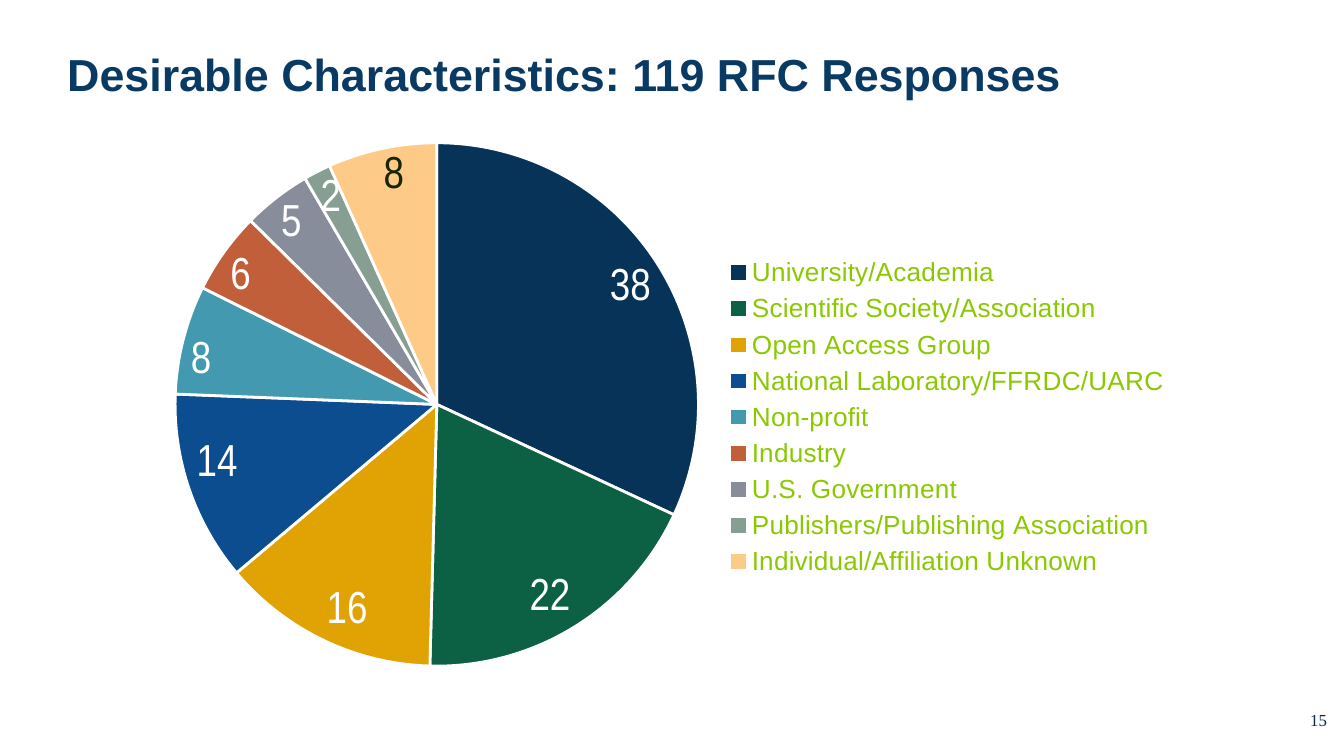
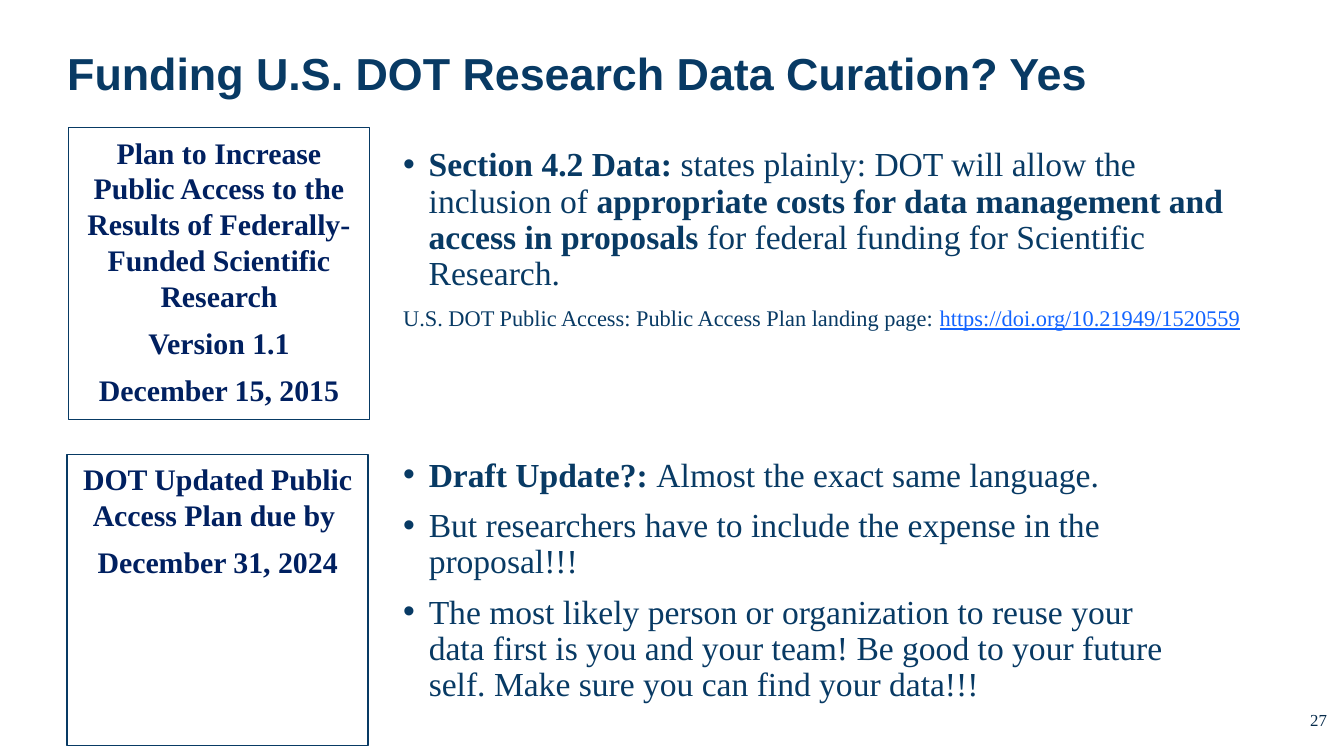
"""Build two slides on public access responses and research data funding."""
from lxml import etree
from pptx import Presentation
from pptx.chart.data import CategoryChartData
from pptx.dml.color import RGBColor
from pptx.enum.chart import XL_CHART_TYPE as ChartType
from pptx.enum.chart import XL_LABEL_POSITION as LabelPosition
from pptx.enum.chart import XL_LEGEND_POSITION as LegendPosition
from pptx.enum.shapes import MSO_SHAPE as Shape
from pptx.enum.text import MSO_ANCHOR as Anchor
from pptx.enum.text import MSO_AUTO_SIZE as AutoSize
from pptx.enum.text import PP_ALIGN as Align
from pptx.oxml.ns import qn
from pptx.util import Inches, Pt

NAVY, FOOTER, PLAN, LINK, WHITE = "083A64", "062B4B", "002060", "1264FF", "FFFFFF"
SERIF = "Times New Roman"


def set_font(font, size, name, color, bold=False, underline=None):
    """Format one font object."""
    font.size, font.name, font.bold = Pt(size), name, bold
    font.color.rgb = RGBColor.from_string(color)
    if underline:
        font.underline = True


def add_text(frame, text, size=18, name=SERIF, color=NAVY, bold=False, bullet=False,
             align=Align.LEFT, spacing=None, before=0, after=0):
    """Add a paragraph; text is a string or a list of (text, font changes) pairs."""
    first = len(frame.paragraphs) == 1 and not frame.paragraphs[0].runs
    para = frame.paragraphs[0] if first else frame.add_paragraph()
    if bullet:
        props = para._p.get_or_add_pPr()
        props.set("marL", str(Inches(0.19)))
        props.set("indent", str(-Inches(0.19)))
        etree.SubElement(props, qn("a:buFont")).set("typeface", "Arial")
        etree.SubElement(props, qn("a:buChar")).set("char", "•")
    para.alignment = align
    para.line_spacing = spacing
    para.space_before = Pt(0 if first else before)
    para.space_after = Pt(after)
    for words, changes in [(text, {})] if isinstance(text, str) else text:
        span = para.add_run()
        span.text = words
        set_font(span.font, **{"size": size, "name": name, "color": color, "bold": bold, **changes})


deck = Presentation()
deck.slide_width = Inches(10)
deck.slide_height = Inches(10 * 9 / 16)

pages = []
for heading, number, top, height, anchor in [
    ("Desirable Characteristics: 119 RFC Responses", "15", 0, 0.75, Anchor.BOTTOM),
    ("Funding U.S. DOT Research Data Curation? Yes", "27", 0.39, 0.35, Anchor.MIDDLE),
]:
    page = deck.slides.add_slide(deck.slide_layouts[5])
    title = page.shapes.title
    title.left, title.top, title.width, title.height = map(Inches, (0.5, top, 7.85, height))
    frame = title.text_frame
    frame.margin_left = frame.margin_top = frame.margin_right = frame.margin_bottom = 0
    frame.auto_size, frame.word_wrap, frame.vertical_anchor = AutoSize.NONE, True, anchor
    add_text(frame, heading, size=24, name="Arial", bold=True, spacing=0.9)
    box = page.shapes.add_textbox(*map(Inches, (9.65, 5.23, 0.35, 0.35)))
    box.text_frame.word_wrap = True
    add_text(box.text_frame, number, size=9, color=FOOTER)
    pages.append(page)
chart_page, funding_page = pages

responses = [
    ("University/Academia", 38, "073359"),
    ("Scientific Society/Association", 22, "0C6144"),
    ("Open Access Group", 16, "E1A203"),
    ("National Laboratory/FFRDC/UARC", 14, "0C4D90"),
    ("Non-profit", 8, "4399B0"),
    ("Industry", 6, "C15F3B"),
    ("U.S. Government", 5, "878D9B"),
    ("Publishers/Publishing Association", 2, "879F92"),
    ("Individual/Affiliation Unknown", 8, "FDCB87"),
]
data = CategoryChartData()
data.categories = [group for group, count, color in responses]
data.add_series("Series 1", [count for group, count, color in responses])
chart = chart_page.shapes.add_chart(
    ChartType.PIE, *map(Inches, (0, 0.35, 10, 4.75)), data).chart
chart.has_title = False
set_font(chart.font, 16, "Lato", "182300")
chart.has_legend = True
legend = chart.legend
legend.position, legend.include_in_layout = LegendPosition.RIGHT, False
set_font(legend.font, 14, "Arial", "8AC900")

pie = chart.plots[0]
pie.vary_by_categories = True
series = pie.series[0]
labels = series.data_labels
labels.show_value, labels.position = True, LabelPosition.INSIDE_END
set_font(labels.font, 24, "Arial Narrow", WHITE)
for index, (group, count, color) in enumerate(responses):
    slice_format = series.points[index].format
    slice_format.fill.solid()
    slice_format.fill.fore_color.rgb = RGBColor.from_string(color)
    slice_format.line.color.rgb = RGBColor.from_string(WHITE)
    slice_format.line.width = Pt(1.5)
last_label = series.points[len(responses) - 1].data_label
set_font(last_label.font, 24, "Arial Narrow", "182300")
last_label.position = LabelPosition.INSIDE_END

plot_area = chart._chartSpace.find(".//" + qn("c:plotArea"))
for area, position, target, bounds in [
    (plot_area, 0, "inner", (0.13, 0.15, 0.39, 0.82)),
    (legend._element, 1, None, (0.54, 0.32, 0.33, 0.52)),
]:
    for old in area.findall(qn("c:layout")):
        area.remove(old)
    layout = etree.Element(qn("c:layout"))
    area.insert(position, layout)
    manual = etree.SubElement(layout, qn("c:manualLayout"))
    settings = [("layoutTarget", target)] if target else []
    settings += [("xMode", "edge"), ("yMode", "edge"), *zip("xywh", bounds)]
    for key, value in settings:
        etree.SubElement(manual, qn("c:" + key)).set("val", str(value))

plans = [
    (0.51, 0.95, ["Plan to Increase Public Access to the Results of Federally-Funded Scientific Research",
                  "Version 1.1", "December 15, 2015"]),
    (0.5, 3.38, ["DOT Updated Public Access Plan due by ", "December 31, 2024"]),
]
for left, top, lines in plans:
    box = funding_page.shapes.add_shape(Shape.RECTANGLE, *map(Inches, (left, top, 2.24, 2.17)))
    box.shadow.inherit = False
    box.fill.background()
    box.line.color.rgb = RGBColor.from_string(NAVY)
    box.line.width = Pt(0.75)
    box.text_frame.word_wrap, box.text_frame.vertical_anchor = True, Anchor.TOP
    for line in lines:
        add_text(box.text_frame, line, size=16, color=PLAN, bold=True, align=Align.CENTER, after=6)

strong = {"bold": True}
notes = [
    (1.1, 6.26, 1.65, [
        ([("Section 4.2 Data:", strong),
          (" states plainly: DOT will allow the inclusion of ", {}),
          ("appropriate costs for data management and access in proposals ", strong),
          ("for federal funding for Scientific Research.", {})], {"bullet": True}),
        ([("U.S. DOT Public Access: Public Access Plan landing page: ", {}),
          ("https://doi.org/10.21949/1520559", {"color": LINK, "underline": True})], {"size": 12}),
    ]),
    (3.41, 5.79, 1.96, [
        ([("Draft Update?: ", strong), ("Almost the exact same language.", {})], {"bullet": True}),
        ("But researchers have to include the expense in the proposal!!!", {"bullet": True}),
        ("The most likely person or organization to reuse your data first is you and your team! "
         "Be good to your future self. Make sure you can find your data!!!", {"bullet": True}),
    ]),
]
for top, width, height, paragraphs in notes:
    box = funding_page.shapes.add_textbox(*map(Inches, (3, top, width, height)))
    frame = box.text_frame
    frame.margin_left = frame.margin_top = frame.margin_right = frame.margin_bottom = 0
    frame.word_wrap = True
    for text, style in paragraphs:
        add_text(frame, text, spacing=0.9, before=7.5, **style)

deck.save("out.pptx")
